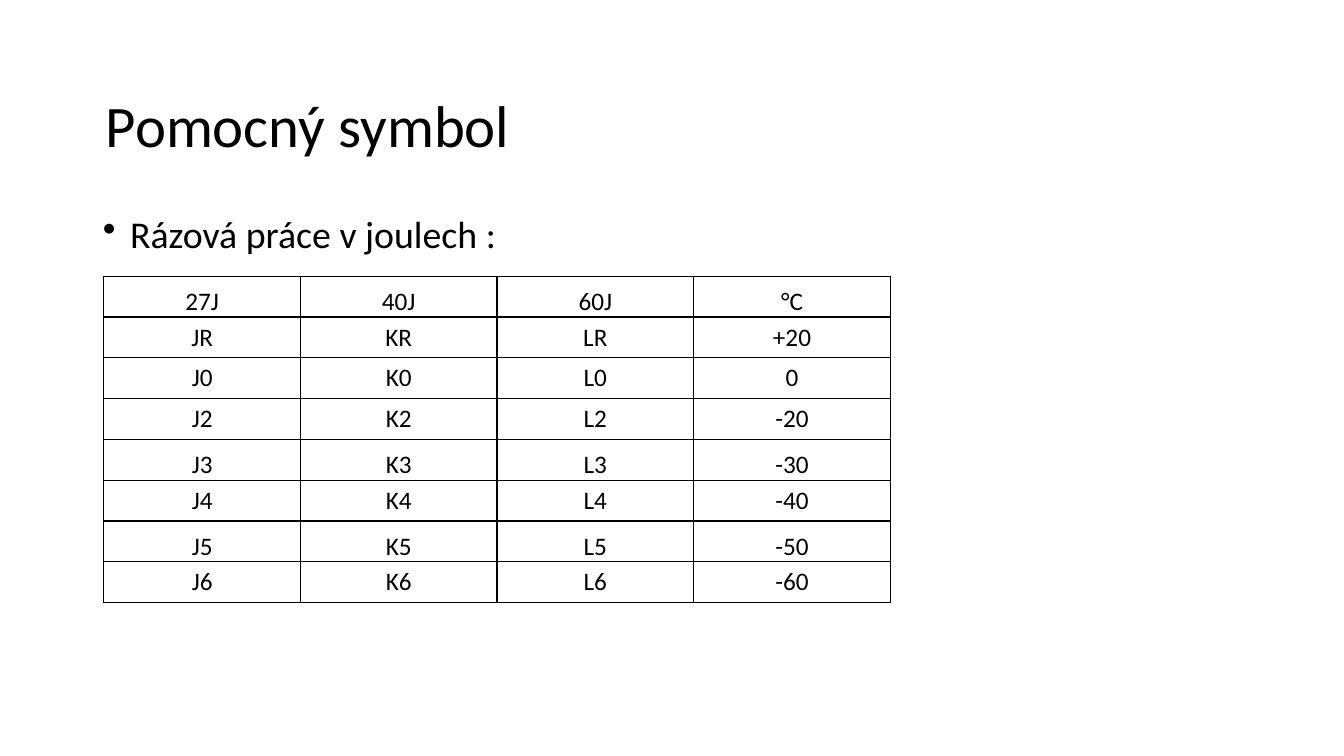
from lxml import etree
from pptx import Presentation
from pptx import util as u
from pptx.dml.color import RGBColor
from pptx.enum import text
from pptx.oxml.ns import qn

COLORS = {"ink": "000000"}
FONT = "Calibri"
GRID_LEFT, GRID_TOP = 1.03, 2.74
COLUMN, ROW = 1.95, 0.405
BULLET_INDENT = 0.27

ENERGIES = [("27J", "J"), ("40J", "K"), ("60J", "L")]
TEMPERATURES = [("R", "+20"), ("0", "0"), ("2", "-20"), ("3", "-30"),
                ("4", "-40"), ("5", "-50"), ("6", "-60")]
BOTTOM_ROWS = {0, 4, 6}


def write(frame, words, size, align=text.PP_ALIGN.LEFT, after=0):
    para = frame.paragraphs[0]
    para.alignment = align
    para.space_after = u.Pt(after)
    span = para.add_run()
    span.text = words
    span.font.name = FONT
    span.font.size = u.Pt(size)
    span.font.color.rgb = RGBColor.from_string(COLORS["ink"])
    return para


def add_line(page, words, left, top, width, height, **style):
    box = page.shapes.add_textbox(*map(u.Inches, (left, top, width, height)))
    frame = box.text_frame
    frame.margin_left = frame.margin_right = 0
    frame.margin_top = frame.margin_bottom = 0
    frame.word_wrap = False
    return write(frame, words, **style)


def add_bullet(para):
    properties = para._p.get_or_add_pPr()
    indent = u.Inches(BULLET_INDENT)
    properties.set("marL", str(indent))
    properties.set("indent", str(-indent))
    etree.SubElement(properties, qn("a:buChar"), char="•")


def add_borders(cell, points=1):
    properties = cell._tc.get_or_add_tcPr()
    for side in ("lnL", "lnR", "lnT", "lnB"):
        line = etree.SubElement(properties, qn(f"a:{side}"), w=str(u.Pt(points)))
        fill = etree.SubElement(line, qn("a:solidFill"))
        etree.SubElement(fill, qn("a:srgbClr"), val=COLORS["ink"])


def add_grid(page, rows):
    count, width = len(rows), len(rows[0])
    frame = page.shapes.add_table(
        count, width, u.Inches(GRID_LEFT), u.Inches(GRID_TOP),
        u.Inches(COLUMN * width), u.Inches(ROW * count))
    table = frame.table
    table.first_row = table.horz_banding = False
    for column in table.columns:
        column.width = u.Inches(COLUMN)
    for index, values in enumerate(rows):
        table.rows[index].height = u.Inches(ROW)
        anchor = (text.MSO_ANCHOR.BOTTOM if index in BOTTOM_ROWS
                  else text.MSO_ANCHOR.MIDDLE)
        for cell, words in zip(table.rows[index].cells, values):
            cell.margin_left = cell.margin_right = 0
            cell.margin_top = cell.margin_bottom = 0
            cell.vertical_anchor = anchor
            add_borders(cell)
            cell.fill.background()
            write(cell.text_frame, words, 18, align=text.PP_ALIGN.CENTER)


def main():
    deck = Presentation()
    deck.slide_width, deck.slide_height = u.Inches(13.33), u.Inches(7.5)
    page = deck.slides.add_slide(deck.slide_layouts[6])
    add_line(page, "Pomocný symbol", 1.05, 0.88, 4.12, 0.57, size=42)
    add_bullet(add_line(page, "Rázová práce v joulech :",
                        1.02, 2.09, 4.03, 0.38, size=27, after=16.8))
    header = [energy for energy, _ in ENERGIES] + ["°C"]
    body = [[letter + mark for _, letter in ENERGIES] + [degrees]
            for mark, degrees in TEMPERATURES]
    add_grid(page, [header] + body)
    deck.save("out.pptx")


if __name__ == "__main__":
    main()
